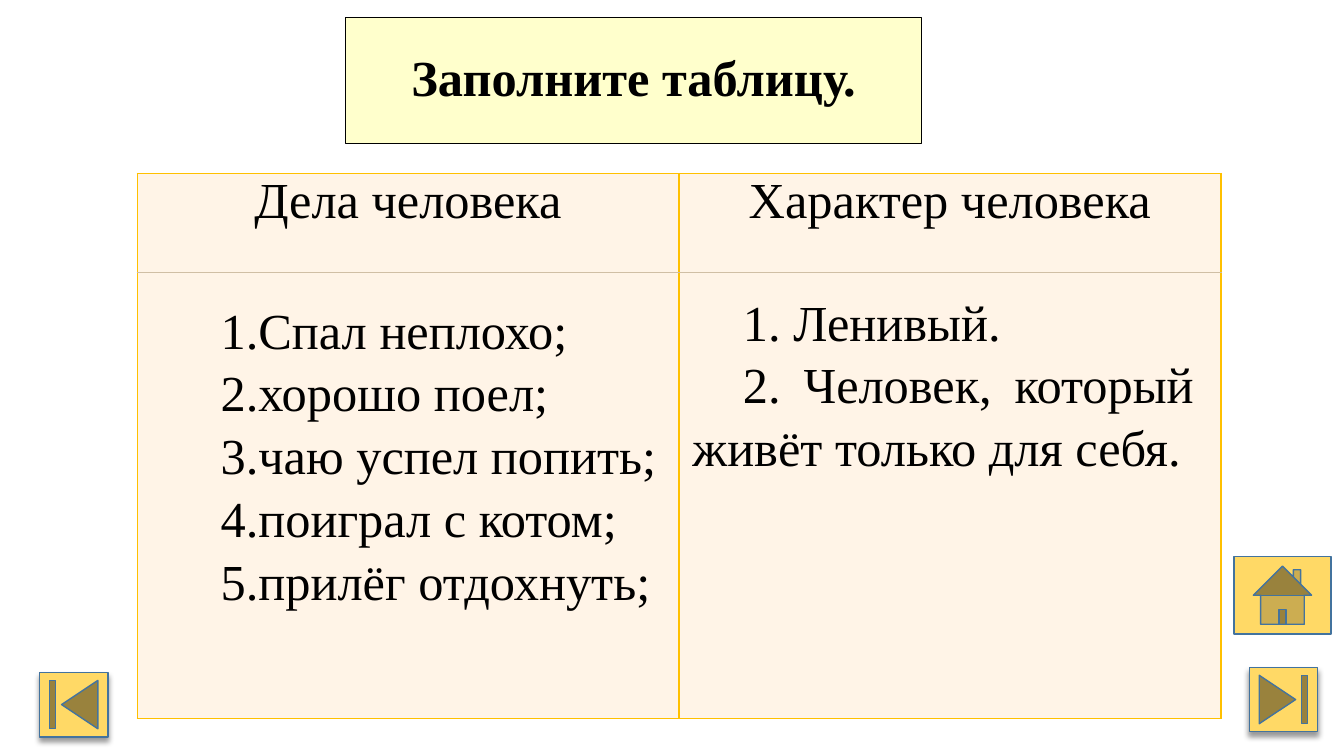
from lxml import etree
from pptx import Presentation
from pptx.dml.color import RGBColor
from pptx.enum import shapes, text
from pptx.oxml import ns
from pptx.util import Inches, Pt

# Content
TITLE = "Заполните таблицу."
HEADS = ["Дела человека", "Характер человека"]
DEEDS = ["Спал неплохо;", "хорошо поел;", "чаю успел попить;",
         "поиграл с котом;", "прилёг отдохнуть;"]
TRAITS = ["1. Ленивый.", "2. Человек, который живёт только для себя."]
# Lists: lines, box, numbered
LISTS = [(DEEDS, (1.59, 2.85, 6.67, 3.13), True),
         (TRAITS, (6.77, 2.77, 5.17, 1.92), False)]
KIND = shapes.MSO_SHAPE
# Buttons: kind, box, rotation, shadow
BUTTONS = [(KIND.ACTION_BUTTON_END, (0.39, 6.67, 0.68, 0.64), 180, True),
           (KIND.ACTION_BUTTON_HOME, (12.24, 5.52, 0.96, 0.77), 0, False),
           (KIND.ACTION_BUTTON_END, (12.39, 6.62, 0.68, 0.64), 0, True)]

FONT = "Times New Roman"
BLACK = RGBColor(0, 0, 0)
YELLOW = RGBColor(0xFF, 0xFF, 0xCC)
GOLD = RGBColor(0xFF, 0xD9, 0x66)
BLUE = RGBColor(0x43, 0x73, 0x9E)
CREAM = RGBColor(0xFF, 0xF4, 0xE7)
AMBER = RGBColor(0xFF, 0xC0, 0x00)
SAND = RGBColor(0xD0, 0xBF, 0xA5)
ALIGN = text.PP_ALIGN


def inches(box):
    return [Inches(v) for v in box]


def style(par, align, bold=False):
    par.alignment = align
    font = par.font
    font.name, font.size, font.bold = FONT, Pt(36), bold
    font.color.rgb = BLACK


def paint(shape, fill, line, width):
    shape.fill.solid()
    shape.fill.fore_color.rgb = fill
    shape.line.color.rgb = line
    shape.line.width = Pt(width)


def add(parent, tag, **attrs):
    return etree.SubElement(parent, ns.qn(tag), attrs)


def cast(shape):
    """Soft shadow straight below the shape."""
    glow = add(shape._element.spPr.find(ns.qn("a:effectLst")), "a:outerShdw",
               blurRad=str(Pt(4)), dist=str(Pt(3)), dir="5400000",
               algn="t", rotWithShape="0")
    add(add(glow, "a:srgbClr", val=str(BLACK)), "a:alpha", val="40000")


def border(cell, sides):
    props = cell._tc.get_or_add_tcPr()
    for spot, (side, color) in enumerate(sides.items()):
        line = etree.Element(ns.qn("a:" + side), {"w": str(Pt(1))})
        add(add(line, "a:solidFill"), "a:srgbClr", val=str(color))
        props.insert(spot, line)


prs = Presentation()
prs.slide_width, prs.slide_height = Inches(13.33), Inches(7.5)
slide = prs.slides.add_slide(prs.slide_layouts[5])

# Title
title = slide.shapes.title
title.left, title.top, title.width, title.height = inches((3.43, 0.17, 5.71, 1.25))
paint(title, YELLOW, BLACK, 0.75)
title.text_frame.text = TITLE
title.text_frame.vertical_anchor = text.MSO_ANCHOR.MIDDLE
head = title.text_frame.paragraphs[0]
head.line_spacing = 0.9
style(head, ALIGN.CENTER, True)

# Buttons
for kind, box, turn, shade in BUTTONS:
    button = slide.shapes.add_shape(kind, *inches(box))
    button.rotation = turn
    button.shadow.inherit = False
    paint(button, GOLD, BLUE, 1)
    if shade:
        cast(button)

# Table
table = slide.shapes.add_table(2, 2, *inches((1.36, 1.72, 10.75, 5.41))).table
table.first_row = table.horz_banding = False
for row, high in zip(table.rows, (0.98, 4.43)):
    row.height = Inches(high)
for col, name in enumerate(HEADS):
    table.columns[col].width = Inches(10.75 / 2)
    for row in range(2):
        cell = table.cell(row, col)
        cell.margin_left = cell.margin_right = Inches(0.07)
        cell.margin_top = cell.margin_bottom = 0
        cell.fill.solid()
        cell.fill.fore_color.rgb = CREAM
        border(cell, {"lnL": AMBER, "lnR": AMBER,
                      "lnT": SAND if row else AMBER,
                      "lnB": AMBER if row else SAND})
    cell = table.cell(0, col)
    cell.text = name
    style(cell.text_frame.paragraphs[0], ALIGN.CENTER)

# Lists over the table
for lines, box, count in LISTS:
    frame = slide.shapes.add_textbox(*inches(box)).text_frame
    frame.word_wrap = True
    frame.margin_top = Inches(0.09)
    frame.text = "\n".join(lines)
    for par in frame.paragraphs:
        par.line_spacing = 1.04
        props = par._p.get_or_add_pPr()
        props.set("marL", "0")
        props.set("indent", str(Inches(0.5)))
        if count:
            add(props, "a:buFont", typeface="+mj-lt")
            add(props, "a:buAutoNum", type="arabicPeriod")
        style(par, ALIGN.JUSTIFY)

prs.save("out.pptx")
